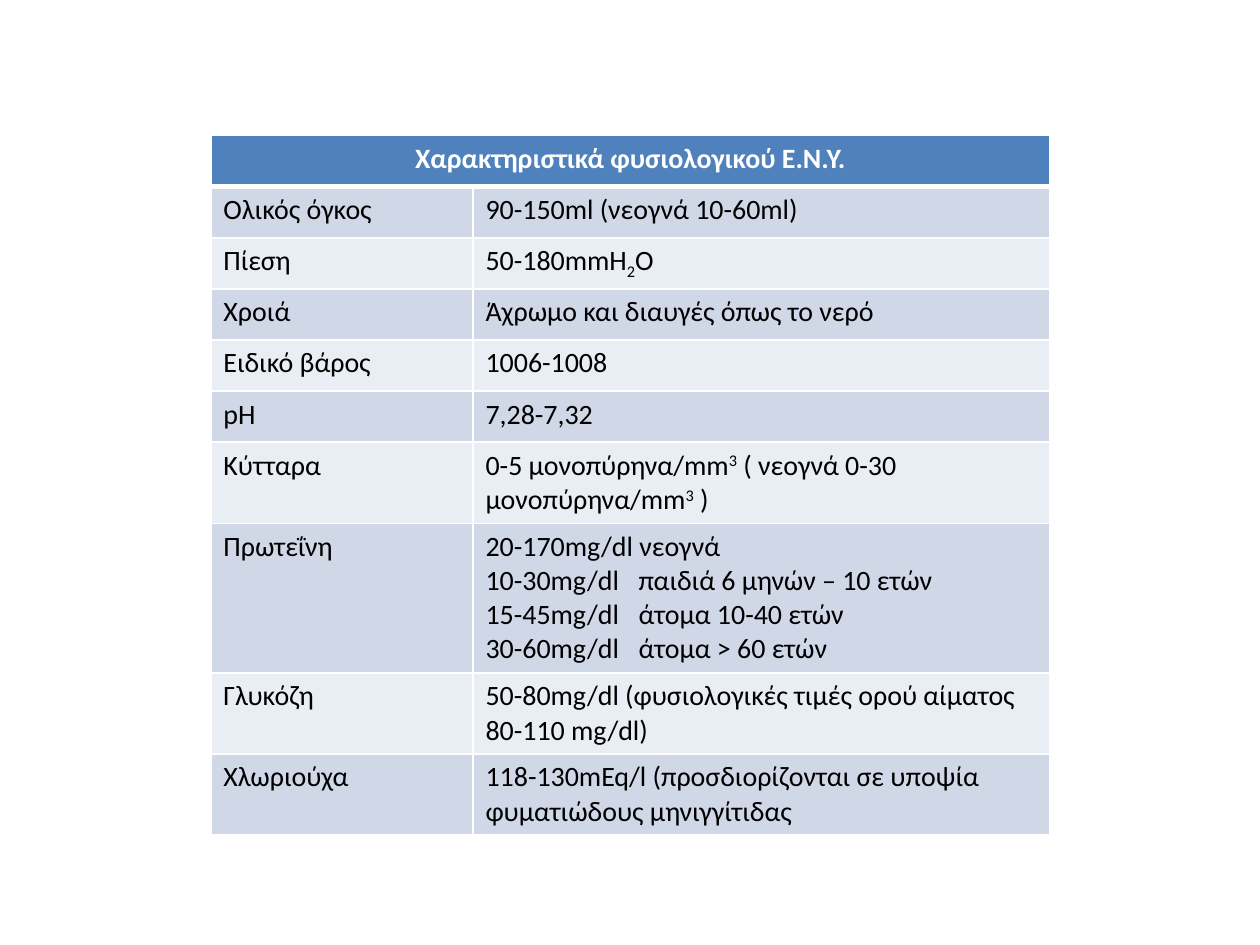
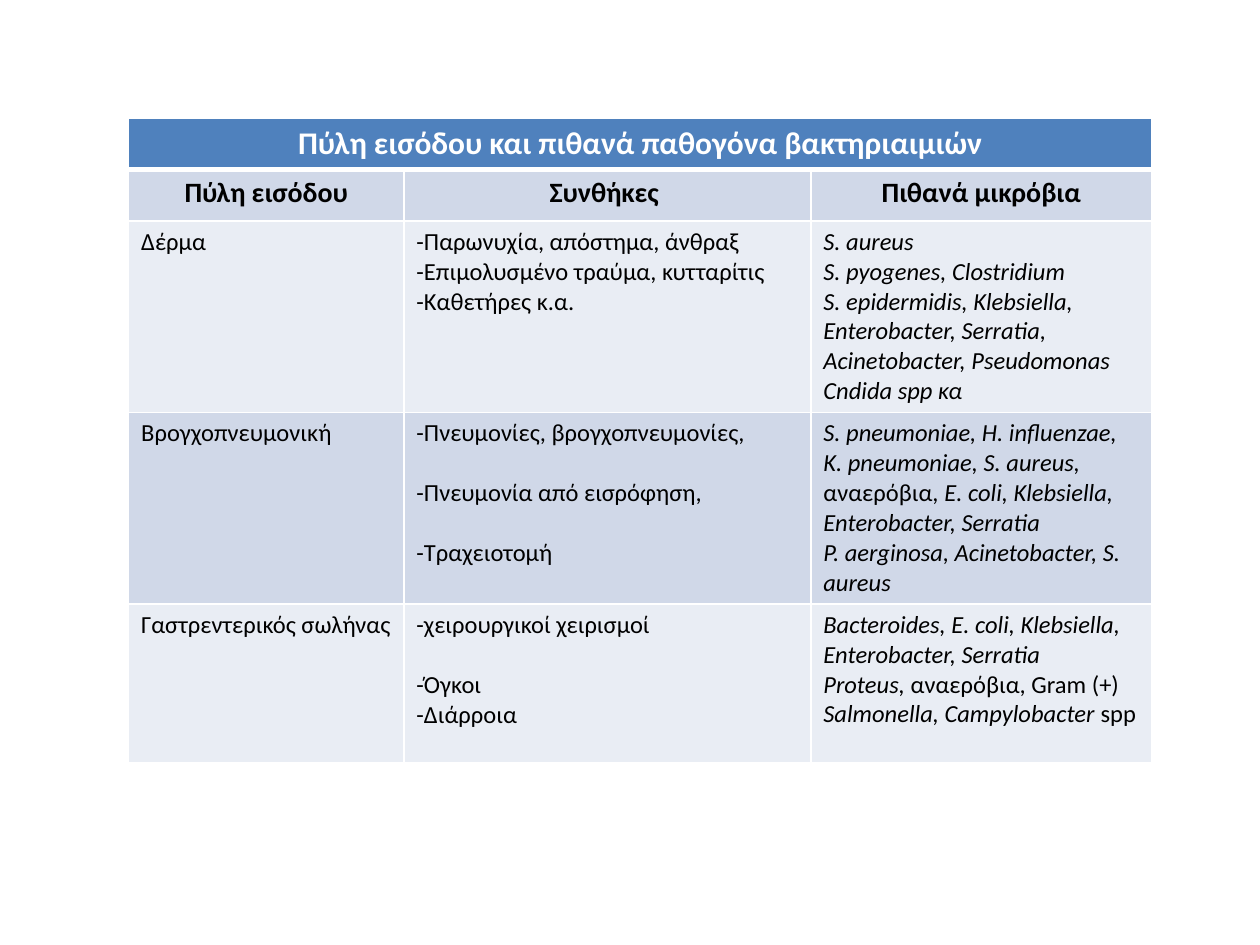
from dataclasses import dataclass
from lxml.etree import SubElement
from pptx import Presentation
from pptx.dml.color import RGBColor
from pptx.enum.text import PP_ALIGN
from pptx.oxml.ns import qn
from pptx.util import Pt


@dataclass(frozen=True)
class Theme:
    font: str = "Calibri"
    head: str = "4F81BD"
    bands: tuple = ("D0D8E8", "E9EDF4")
    ink: str = "000000"
    white: str = "FFFFFF"
    large: int = 18
    normal: int = 16
    small: int = 14
    thin: int = 1
    thick: int = 3
    row: float = 29.2
    leading: float = 1.22
    tab: float = 87.4


THEME = Theme()

# A piece of text after "|" may start with one of these marks
BASE = {"_": "-25000", "^": "30000"}
ITALIC = "~"

# An empty line in a cell stands for a gap before the next paragraph
FLUID = [
    ("Ολικός όγκος", "90-150ml (νεογνά 10-60ml)"),
    ("Πίεση", "50-180mmH|_2|O"),
    ("Χροιά", "Άχρωμο και διαυγές όπως το νερό"),
    ("Ειδικό βάρος", "1006-1008"),
    ("pH", "7,28-7,32"),
    ("Κύτταρα", "0-5 μονοπύρηνα/mm|^3| ( νεογνά 0-30 μονοπύρηνα/mm|^3| )"),
    ("Πρωτεΐνη",
     "20-170mg/dl νεογνά\n"
     "10-30mg/dl\tπαιδιά 6 μηνών – 10 ετών\n"
     "15-45mg/dl\tάτομα 10-40 ετών\n"
     "30-60mg/dl\tάτομα > 60 ετών"),
    ("Γλυκόζη", "50-80mg/dl (φυσιολογικές τιμές ορού αίματος 80-110 mg/dl)"),
    ("Χλωριούχα",
     "118-130mEq/l (προσδιορίζονται σε υποψία φυματιώδους μηνιγγίτιδας"),
]

LABELS = ("Πύλη εισόδου", "Συνθήκες ", "Πιθανά μικρόβια")
ENTRY = [
    ("Δέρμα",
     "-Παρωνυχία, απόστημα, άνθραξ\n"
     "-Eπιμολυσμένο τραύμα, κυτταρίτις\n"
     "-Kαθετήρες κ.α.",
     "~S. aureus\n"
     "~S. pyogenes, Clostridium\n"
     "~S. epidermidis, Klebsiella, Enterobacter, Serratia, "
     "Acinetobacter, Pseudomonas\n"
     "~Cndida spp κα"),
    ("Βρογχοπνευμονική",
     "-Πνευμονίες, βρογχοπνευμονίες,\n\n"
     "-Πνευμονία από εισρόφηση,\n\n"
     "-Τραχειοτομή",
     "~S. pneumoniae, H. influenzae, K. pneumoniae, S. aureus, "
     "|αναερόβια, |~E. coli, Klebsiella, Enterobacter, Serratia\n"
     "~P. aerginosa, Acinetobacter, S. aureus"),
    ("Γαστρεντερικός σωλήνας",
     "-χειρουργικοί χειρισμοί\n\n"
     "-Όγκοι\n"
     "-Διάρροια",
     "~Bacteroides, E. coli, Klebsiella, Enterobacter, Serratia\n"
     "~Proteus, |αναερόβια, Gram (+)\n"
     "~Salmonella, Campylobacter |spp"),
]


def add_run(para, piece, size, bold, color):
    mark = piece[0]
    run = para.add_run()
    run.text = piece[1:] if mark in BASE or mark == ITALIC else piece
    font = run.font
    font.name, font.size, font.bold = THEME.font, Pt(size), bold
    font.italic = mark == ITALIC
    font.color.rgb = RGBColor.from_string(color)
    if mark in BASE:
        run._r.get_or_add_rPr().set("baseline", BASE[mark])


def write(cell, text, size=THEME.normal, bold=False, color=THEME.ink,
          align=PP_ALIGN.LEFT):
    frame = cell.text_frame
    para, gap = frame.paragraphs[0], 0
    for num, line in enumerate(text.split("\n")):
        if not line:
            gap += size * THEME.leading
            continue
        if num:
            para = frame.add_paragraph()
        if "\t" in line:
            tabs = SubElement(para._p.get_or_add_pPr(), qn("a:tabLst"))
            SubElement(tabs, qn("a:tab"), pos=str(Pt(THEME.tab)), algn="l")
        para.alignment = align
        if gap:
            para.space_before, gap = Pt(gap), 0
        for piece in line.split("|"):
            add_run(para, piece, size, bold, color)


def paint(cell, fill, top, bottom):
    """Set the borders of a cell, then its fill."""
    props = cell._tc.get_or_add_tcPr()
    widths = {"L": THEME.thin, "R": THEME.thin, "T": top, "B": bottom}
    for side, width in widths.items():
        line = SubElement(props, qn(f"a:ln{side}"), w=str(Pt(width)))
        solid = SubElement(line, qn("a:solidFill"))
        SubElement(solid, qn("a:srgbClr"), val=THEME.white)
    cell.fill.solid()
    cell.fill.fore_color.rgb = RGBColor.from_string(fill)


def add_grid(slide, left, top, widths, heights):
    """Add a banded table whose first row is one merged heading."""
    grid = slide.shapes.add_table(
        len(heights), len(widths), Pt(left), Pt(top),
        Pt(sum(widths)), Pt(sum(heights))).table
    for col, width in zip(grid.columns, widths):
        col.width = Pt(width)
    for num, (row, height) in enumerate(zip(grid.rows, heights)):
        row.height = Pt(height)
        fill = THEME.bands[(num - 1) % 2] if num else THEME.head
        for cell in row.cells:
            paint(cell, fill,
                  top=THEME.thick if num == 1 else THEME.thin,
                  bottom=THEME.thin if num else THEME.thick)
    grid.cell(0, 0).merge(grid.cell(0, len(widths) - 1))
    return grid


def head(grid, text, size):
    write(grid.cell(0, 0), text, size=size, bold=True, color=THEME.white,
          align=PP_ALIGN.CENTER)


def fill_rows(grid, rows, start, **style):
    for num, row in enumerate(rows, start):
        for col, text in enumerate(row):
            write(grid.cell(num, col), text, **style)


def main():
    deck = Presentation()
    deck.slide_width, deck.slide_height = Pt(720), Pt(540)
    blank = deck.slide_layouts[6]

    # Normal values of the fluid
    heights = [THEME.row] * 6 + [45.7, 84, 45.7, 44.8]
    grid = add_grid(deck.slides.add_slide(blank), 120.5, 77.5,
                    [149.8, 329.8], heights)
    head(grid, "Χαρακτηριστικά φυσιολογικού Ε.Ν.Υ.", THEME.normal)
    fill_rows(grid, FLUID, 1)

    # Entry points and likely bacteria
    heights = [THEME.row] * 2 + [108, 108, 91]
    grid = add_grid(deck.slides.add_slide(blank), 73.5, 67.8,
                    [157.3, 232.5, 195], heights)
    head(grid, "Πύλη εισόδου και πιθανά παθογόνα βακτηριαιμιών", THEME.large)
    fill_rows(grid, [LABELS], 1, bold=True, align=PP_ALIGN.CENTER)
    fill_rows(grid, ENTRY, 2, size=THEME.small)

    deck.save("out.pptx")


if __name__ == "__main__":
    main()
